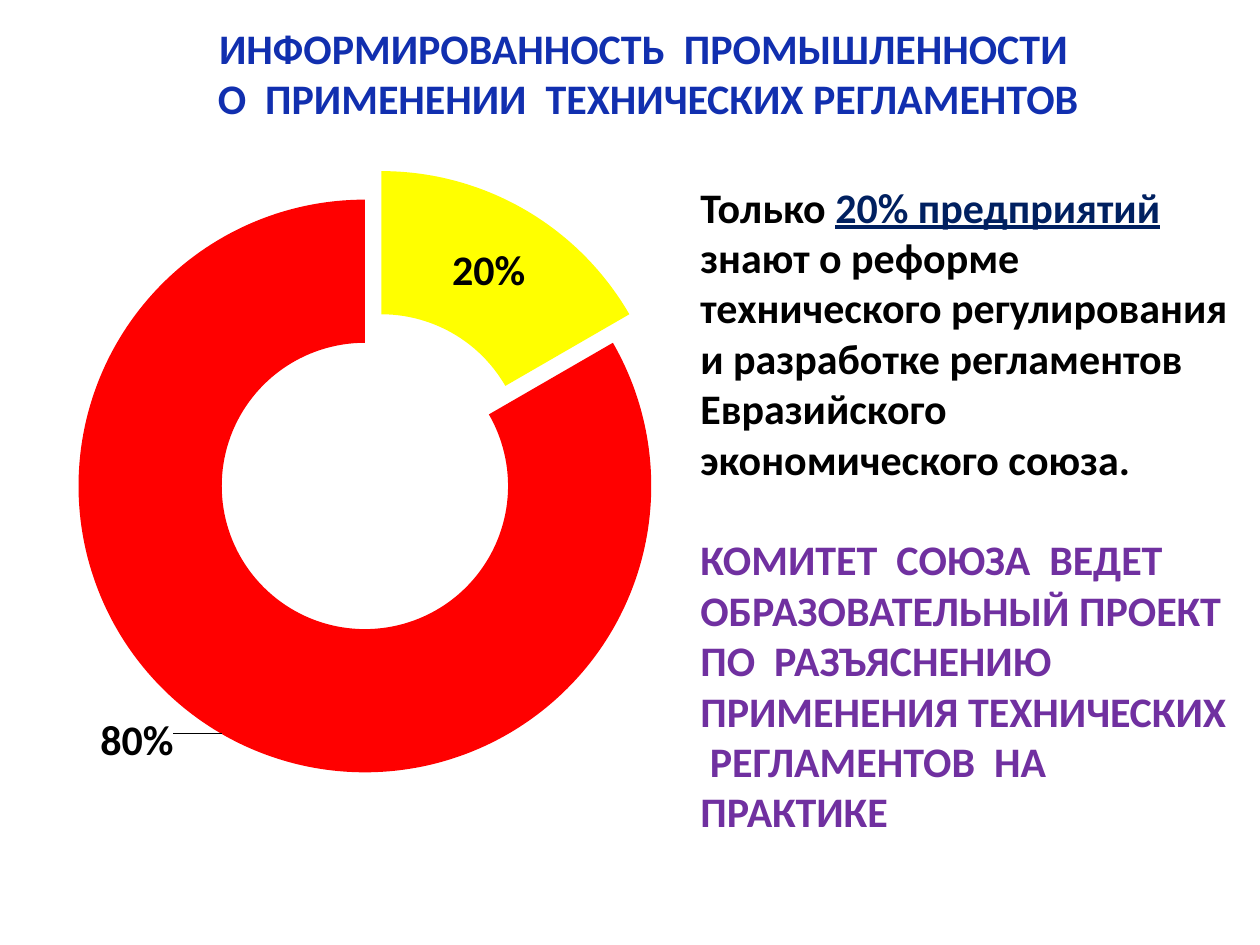
from dataclasses import dataclass

from lxml.etree import SubElement
from pptx import Presentation
from pptx.chart.data import CategoryChartData
from pptx.dml.color import RGBColor
from pptx.enum.chart import XL_CHART_TYPE
from pptx.enum.text import MSO_ANCHOR, PP_ALIGN
from pptx.oxml import parse_xml
from pptx.oxml.ns import nsdecls, qn
from pptx.util import Inches, Pt

WIDTH, HEIGHT = 10, 7.5


@dataclass(frozen=True)
class Theme:
    font: str = "Calibri"
    size: int = 24
    title: str = "112FAF"
    text: str = "000000"
    accent: str = "002060"
    project: str = "7030A0"
    informed: str = "FFFF00"
    uninformed: str = "FF0000"


THEME = Theme()


def box(left, top, width, height):
    """Turn shares of the slide's size into lengths."""
    return (Inches(left * WIDTH), Inches(top * HEIGHT),
            Inches(width * WIDTH), Inches(height * HEIGHT))


def style(font, color, underline=False):
    font.name, font.size, font.bold = THEME.font, Pt(THEME.size), True
    font.color.rgb = RGBColor.from_string(color)
    if underline:
        font.underline = True


def add_run(p, text, color, underline=False):
    r = p.add_run()
    r.text = text
    style(r.font, color, underline)


def set_title(slide, lines, area):
    sp = slide.shapes.title
    sp.left, sp.top, sp.width, sp.height = area
    tf = sp.text_frame
    tf.text = "\n".join(lines)
    tf.vertical_anchor = MSO_ANCHOR.TOP
    for p in tf.paragraphs:
        p.alignment = PP_ALIGN.CENTER
        for r in p.runs:
            style(r.font, THEME.title)


def add_text(slide, paragraphs, area):
    """Each paragraph is a list of (text, color, underline) runs."""
    tf = slide.shapes.add_textbox(*area).text_frame
    tf.word_wrap = True
    for i, runs in enumerate(paragraphs):
        p = tf.add_paragraph() if i else tf.paragraphs[0]
        if i:
            p.space_before = Pt(THEME.size * 1.2)
        for run in runs:
            add_run(p, *run)


def manual_layout(**values):
    layout = parse_xml(f"<c:layout {nsdecls('c')}><c:manualLayout/></c:layout>")
    for tag, value in values.items():
        SubElement(layout[0], qn(f"c:{tag}")).set("val", str(value))
    return layout


def explosion(percent):
    return parse_xml(f'<c:explosion {nsdecls("c")} val="{percent}"/>')


def add_ring(slide, slices, area):
    """Each slice is (value, label, color, explosion, label shift)."""
    data = CategoryChartData()
    data.categories = [""] * len(slices)
    data.add_series("Series 1", [s[0] for s in slices])
    chart = slide.shapes.add_chart(XL_CHART_TYPE.DOUGHNUT, *area, data).chart
    chart.has_legend = chart.has_title = False
    chart.font.name, chart.font.size = THEME.font, Pt(18)

    # Plot position inside the chart
    plot_area = chart.plots[0]._element.getparent()
    for old in plot_area.findall(qn("c:layout")):
        plot_area.remove(old)
    plot_area.insert(0, manual_layout(
        layoutTarget="inner", xMode="edge", yMode="edge",
        x=0.08, y=0.05, w=0.63, h=0.76))

    # Slices and their labels
    chart.plots[0].vary_by_categories = True
    series = chart.plots[0].series[0]
    labels = series.data_labels
    labels.show_value = labels.show_category_name = True
    style(labels.font, THEME.text)
    for i, (_, label, color, percent, shift) in enumerate(slices):
        point = series.points[i]
        fill = point.format.fill
        fill.solid()
        fill.fore_color.rgb = RGBColor.from_string(color)
        point.format.line.fill.background()
        d_pt = series._element.findall(qn("c:dPt"))[i]
        d_pt.find(qn("c:spPr")).addprevious(explosion(percent))
        add_run(point.data_label.text_frame.paragraphs[0], label, THEME.text)
        if shift:
            d_lbl = labels._element.findall(qn("c:dLbl"))[i]
            for old in d_lbl.findall(qn("c:layout")):
                d_lbl.remove(old)
            d_lbl.insert(1, manual_layout(x=shift[0], y=shift[1]))
    # Series-wide separation, refined by each slice
    series._element.find(qn("c:dPt")).addprevious(explosion(4))


def main():
    prs = Presentation()
    prs.slide_width, prs.slide_height = Inches(WIDTH), Inches(HEIGHT)
    slide = prs.slides.add_slide(prs.slide_layouts[5])

    # Share of informed companies
    add_ring(slide, [
        (0.2, "20%", THEME.informed, 0, None),
        (1, "80%", THEME.uninformed, 23, (-0.13, 0.09)),
    ], box(0.012, 0.132, 0.736, 0.819))

    # Commentary
    add_text(slide, [
        [("Только ", THEME.text),
         ("20% предприятий ", THEME.accent, True),
         ("знают о реформе технического регулирования и разработке "
          "регламентов Евразийского экономического союза.", THEME.text)],
        [("КОМИТЕТ  СОЮЗА  ВЕДЕТ ОБРАЗОВАТЕЛЬНЫЙ ПРОЕКТ  ПО  РАЗЪЯСНЕНИЮ  "
          "ПРИМЕНЕНИЯ ТЕХНИЧЕСКИХ  РЕГЛАМЕНТОВ  НА ПРАКТИКЕ",
          THEME.project)],
    ], box(0.546, 0.185, 0.441, 0.713))

    set_title(slide, ["ИНФОРМИРОВАННОСТЬ  ПРОМЫШЛЕННОСТИ ",
                      "О  ПРИМЕНЕНИИ  ТЕХНИЧЕСКИХ РЕГЛАМЕНТОВ"],
              box(0.097, 0.017, 0.835, 0.121))
    prs.save("out.pptx")


if __name__ == "__main__":
    main()
